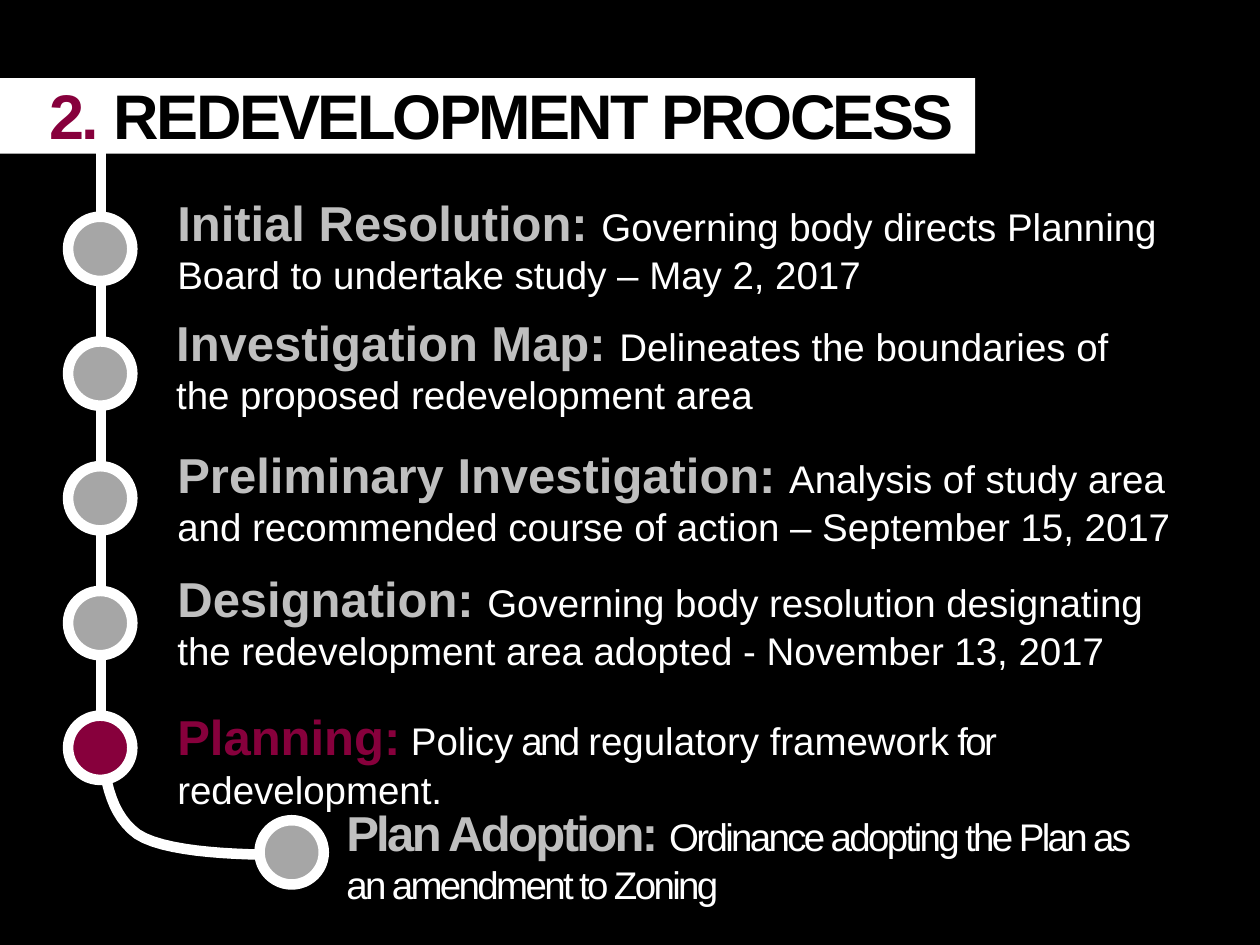
"""Build the redevelopment process timeline slide."""
from lxml import etree
from pptx import Presentation
from pptx.dml.color import RGBColor
from pptx.enum import shapes, text
from pptx.oxml.ns import qn
from pptx.util import Inches, Pt

BLACK = RGBColor(0x00, 0x00, 0x00)
WHITE = RGBColor(0xFF, 0xFF, 0xFF)
SILVER = RGBColor(0xBF, 0xBF, 0xBF)
GRAY = RGBColor(0xA6, 0xA6, 0xA6)
MAROON = RGBColor(0x87, 0x00, 0x3C)
TIGHT = -1.5
DOT = 0.51
TRACK_X = 0.8
FIRST_DOT_Y, DOT_PITCH = 1.72, 0.99


def add_run(paragraph, words, size=22, color=WHITE, bold=False, spacing=0):
    run = paragraph.add_run()
    run.text = words
    run.font.name = "Arial"
    run.font.size = Pt(size)
    run.font.bold = bold
    run.font.color.rgb = color
    if spacing:
        run._r.get_or_add_rPr().set("spc", str(int(spacing * 100)))


def bezier(start, c1, c2, end, steps=16):
    points = []
    for i in range(1, steps + 1):
        t = i / steps
        weights = ((1 - t) ** 3, 3 * t * (1 - t) ** 2, 3 * t * t * (1 - t), t ** 3)
        points.append(tuple(
            Inches(sum(w * p[axis] for w, p in zip(weights, (start, c1, c2, end))))
            for axis in (0, 1)))
    return points


prs = Presentation()
prs.slide_width, prs.slide_height = Inches(10), Inches(7.5)
slide = prs.slides.add_slide(prs.slide_layouts[5])
slide.background.fill.solid()
slide.background.fill.fore_color.rgb = BLACK

title = slide.shapes.title
title.left, title.top = Inches(0), Inches(0.62)
title.width, title.height = Inches(7.74), Inches(0.6)
title.fill.solid()
title.fill.fore_color.rgb = WHITE
heading = title.text_frame
heading.auto_size = text.MSO_AUTO_SIZE.NONE
heading.word_wrap = False
heading.vertical_anchor = text.MSO_ANCHOR.TOP
heading.margin_left, heading.margin_top = Inches(0.39), Inches(0.13)
heading.margin_right = heading.margin_bottom = Inches(0)
heading_line = heading.paragraphs[0]
heading_line.alignment = text.PP_ALIGN.LEFT
heading_line.line_spacing = 0.75
add_run(heading_line, "2. ", 36, MAROON, True, TIGHT)
add_run(heading_line, "REDEVELOPMENT PROCESS", 36, BLACK, True, TIGHT)

track = slide.shapes.add_connector(
    shapes.MSO_CONNECTOR.STRAIGHT,
    Inches(TRACK_X), Inches(1.2), Inches(TRACK_X), Inches(5.93))
track.line.color.rgb = WHITE
track.line.width = Pt(6)
etree.SubElement(track._element.spPr, qn("a:effectLst"))

bend_start, bend_middle, bend_end = (TRACK_X, 5.67), (1.09, 6.62), (2.4, 6.79)
builder = slide.shapes.build_freeform(Inches(TRACK_X), Inches(5.67))
builder.add_line_segments(
    bezier(bend_start, (0.81, 6.05), (0.83, 6.43), bend_middle)
    + bezier(bend_middle, (1.36, 6.8), (2.16, 6.78), bend_end), close=False)
branch = builder.convert_to_shape()
branch.shadow.inherit = False
branch.fill.background()
branch.line.color.rgb = WHITE
branch.line.width = Pt(6)

dots = [(0.54, FIRST_DOT_Y + DOT_PITCH * i, GRAY) for i in range(4)]
dots += [(0.54, FIRST_DOT_Y + DOT_PITCH * 4, MAROON), (2.06, 6.51, GRAY)]
for left, top, color in dots:
    dot = slide.shapes.add_shape(
        shapes.MSO_SHAPE.OVAL, Inches(left), Inches(top), Inches(DOT), Inches(DOT))
    dot.shadow.inherit = False
    dot.fill.solid()
    dot.fill.fore_color.rgb = color
    dot.line.color.rgb = WHITE
    dot.line.width = Pt(6)

stages = [
    (1.31, 1.48, 8.27, "Initial Resolution: ", SILVER, 0,
     [("Governing body directs Planning Board to undertake study – May 2, 2017", 0)]),
    (1.3, 2.43, 8.02, "Investigation Map: ", SILVER, 0,
     [("Delineates the boundaries of the proposed redevelopment area", 0)]),
    (1.31, 3.48, 8.53, "Preliminary Investigation: ", SILVER, 0,
     [("Analysis of study area and recommended course of action – September 15, 2017", 0)]),
    (1.31, 4.46, 8.02, "Designation: ", SILVER, 0,
     [("Governing body resolution designating the redevelopment area adopted"
       " - November 13, 2017", 0)]),
    (1.31, 5.56, 8.86, "Planning", MAROON, 0,
     [(" ", TIGHT), ("Policy", 0), (" and ", TIGHT), ("regulatory framework", 0),
      (" for ", TIGHT), ("redevelopment.", 0)]),
    (2.65, 6.32, 6.68, "Plan Adoption: ", SILVER, TIGHT,
     [("Ordinance adopting the Plan as an amendment to Zoning", TIGHT)]),
]
for left, top, width, stage, color, stage_spacing, details in stages:
    box = slide.shapes.add_textbox(Inches(left), Inches(top), Inches(width), Inches(0.94))
    box.text_frame.word_wrap = True
    paragraph = box.text_frame.paragraphs[0]
    add_run(paragraph, stage, 28, color, True, stage_spacing)
    if stage == "Planning":
        add_run(paragraph, ":", 28, color, True, TIGHT)
    for words, spacing in details:
        add_run(paragraph, words, bold=words == " ", spacing=spacing)

prs.save("out.pptx")
